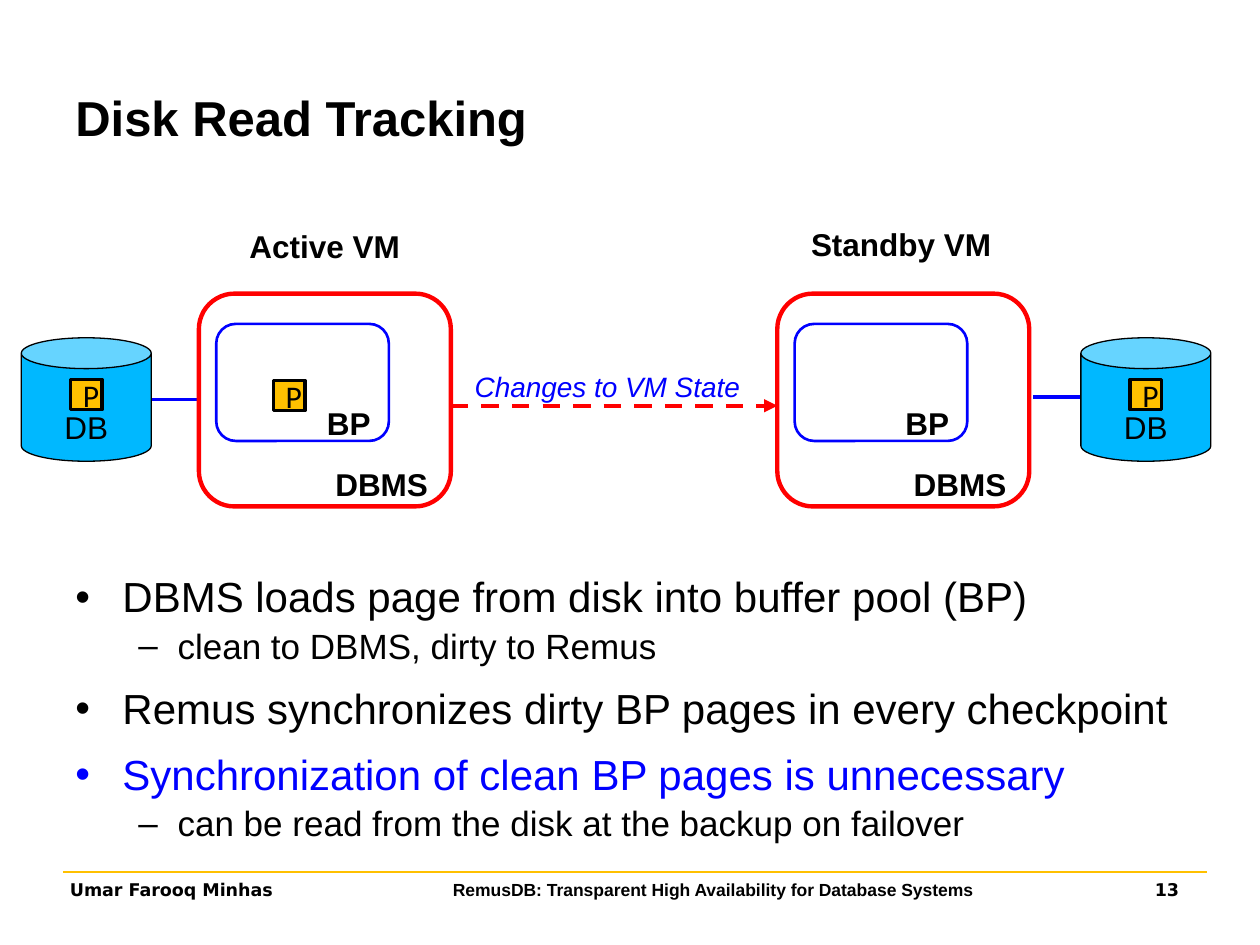
"""Build the Disk Read Tracking slide."""
from dataclasses import dataclass

from lxml.etree import SubElement
from pptx import Presentation
from pptx.dml.color import RGBColor
from pptx.enum.dml import MSO_LINE
from pptx.enum.shapes import MSO_CONNECTOR, MSO_SHAPE
from pptx.enum.text import MSO_ANCHOR, PP_ALIGN
from pptx.oxml.ns import qn
from pptx.util import Cm, Pt

COLORS = {
    "black": "000000",
    "blue": "0000FF",
    "red": "FF0000",
    "amber": "FFC000",
    "disk": "00B8FF",
}


@dataclass
class Machine:
    """A virtual machine with its disk, in centimetres."""
    title: str
    title_left: float
    title_top: float
    vm_left: float
    disk_left: float
    link_start: float
    link_y: float


@dataclass
class Bullet:
    """One point of the body text."""
    text: str
    level: int = 0
    before: float = 12
    color: str = "black"


@dataclass
class BulletStyle:
    """Marker, size and indents of one outline level."""
    marker: str
    size: float
    margin: float
    hanging: float


MACHINES = [
    Machine("Active VM", 4.78, 4.45, 4.01, 0.43, 3.05, 8.05),
    Machine("Standby VM", 16.1, 4.42, 15.67, 21.79, 20.83, 8.0),
]
BULLETS = [
    Bullet("DBMS loads page from disk into buffer pool (BP)", before=0),
    Bullet("clean to DBMS, dirty to Remus", 1, 4),
    Bullet("Remus synchronizes dirty BP pages in every checkpoint"),
    Bullet("Synchronization of clean BP pages is unnecessary", color="blue"),
    Bullet("can be read from the disk at the backup on failover", 1, 4),
]
STYLES = [BulletStyle("•", 24, 0.95, 0.95), BulletStyle("–", 20, 2.06, 0.79)]


def rgb(color: str) -> RGBColor:
    """Look up a named colour."""
    return RGBColor.from_string(COLORS[color])


def style_run(run, size: float, color: str = "black", bold: bool = False,
              italic: bool = False, face: str = "Arial") -> None:
    """Set the font of a run."""
    run.font.name = face
    run.font.size = Pt(size)
    run.font.bold = bold
    run.font.italic = italic
    run.font.color.rgb = rgb(color)


def add_text(slide, text: str, left: float, top: float, width: float, height: float,
             size: float, wrap: bool = True, **font):
    """Add a one-line text box and return its frame."""
    frame = slide.shapes.add_textbox(Cm(left), Cm(top), Cm(width), Cm(height)).text_frame
    frame.word_wrap = wrap
    frame.text = text
    style_run(frame.paragraphs[0].runs[0], size, **font)
    return frame


def add_box(slide, kind, left: float, top: float, width: float, height: float,
            line: str, weight: float, fill: str, text: str, align, anchor, **font):
    """Add a labelled preset shape and return its frame."""
    box = slide.shapes.add_shape(kind, Cm(left), Cm(top), Cm(width), Cm(height))
    box.shadow.inherit = False
    if fill:
        box.fill.solid()
        box.fill.fore_color.rgb = rgb(fill)
    else:
        box.fill.background()
    box.line.color.rgb = rgb(line)
    box.line.width = Pt(weight)
    frame = box.text_frame
    frame.text = text
    frame.vertical_anchor = anchor
    frame.paragraphs[0].alignment = align
    style_run(frame.paragraphs[0].runs[0], 18, **font)
    return frame


def add_line(slide, start: float, end: float, y: float, color: str, weight: float):
    """Add a horizontal line."""
    line = slide.shapes.add_connector(MSO_CONNECTOR.STRAIGHT, Cm(start), Cm(y), Cm(end), Cm(y))
    line.line.color.rgb = rgb(color)
    line.line.width = Pt(weight)
    SubElement(line._element.spPr, qn("a:effectLst"))
    return line


def add_page(slide, left: float, top: float) -> None:
    """Add a data page marked P."""
    add_box(slide, MSO_SHAPE.RECTANGLE, left, top, 0.64, 0.61, "black", 2, "amber",
            "P", PP_ALIGN.CENTER, MSO_ANCHOR.MIDDLE, face="Calibri")


def add_container(slide, text: str, left: float, top: float, width: float, height: float,
                  line: str, weight: float, label_drop: float) -> None:
    """Add a rounded outline with its label at the lower right."""
    frame = add_box(slide, MSO_SHAPE.ROUNDED_RECTANGLE, left, top, width, height, line, weight,
                    "", text, PP_ALIGN.RIGHT, MSO_ANCHOR.TOP, bold=True)
    frame.margin_top = Cm(label_drop)
    frame.margin_bottom = 0


def add_machine(slide, machine: Machine) -> None:
    """Add a virtual machine, its buffer pool and its disk."""
    add_text(slide, machine.title, machine.title_left, machine.title_top, 4.2, 1.02, 18,
             wrap=False, bold=True)
    add_line(slide, machine.link_start, machine.link_start + 0.96, machine.link_y, "blue", 2)
    add_container(slide, "BP", machine.vm_left + 0.35, 6.53, 3.48, 2.36, "blue", 1.5, 1.5)
    add_container(slide, "DBMS", machine.vm_left, 5.92, 5.08, 4.29, "red", 2.5, 3.24)
    disk = add_box(slide, MSO_SHAPE.CAN, machine.disk_left, 6.81, 2.62, 2.49, "black", 0.75,
                   "disk", "DB", PP_ALIGN.CENTER, MSO_ANCHOR.BOTTOM)
    disk.margin_bottom = 0
    add_page(slide, machine.disk_left + 0.99, 7.65)


def add_bullets(slide) -> None:
    """Add the two-level body text."""
    frame = slide.shapes.add_textbox(Cm(1.27), Cm(11.5), Cm(23.7), Cm(5.9)).text_frame
    frame.word_wrap = True
    for index, bullet in enumerate(BULLETS):
        style = STYLES[bullet.level]
        paragraph = frame.paragraphs[0] if index == 0 else frame.add_paragraph()
        paragraph.text = bullet.text
        paragraph.level = bullet.level
        paragraph.line_spacing = 0.9
        paragraph.space_before = Pt(bullet.before)
        properties = paragraph._p.get_or_add_pPr()
        properties.set("marL", str(Cm(style.margin)))
        properties.set("indent", str(-Cm(style.hanging)))
        SubElement(properties, qn("a:buFont"), typeface="Arial")
        SubElement(properties, qn("a:buChar"), char=style.marker)
        style_run(paragraph.runs[0], style.size, bullet.color)


def add_footer(slide) -> None:
    """Add the footer rule with author, talk title and page number."""
    add_line(slide, 1.27, 24.33, 17.58, "amber", 0.75)
    frame = add_text(slide, "Umar Farooq Minhas", 1.16, 17.6, 23.1, 1.02, 10,
                     bold=True, face="DejaVu Sans")
    paragraph = frame.paragraphs[0]
    stops = SubElement(paragraph._p.get_or_add_pPr(), qn("a:tabLst"))
    for position, align in ((12.96, "ctr"), (22.36, "r")):
        SubElement(stops, qn("a:tab"), pos=str(Cm(position)), algn=align)
    for text, face in (
        ("\tRemusDB: Transparent High Availability for Database Systems", "Arial"),
        ("\t13", "DejaVu Sans"),
    ):
        run = paragraph.add_run()
        run.text = text
        style_run(run, 10, bold=True, face=face)


def main() -> None:
    """Draw the slide and save it."""
    deck = Presentation()
    deck.slide_width, deck.slide_height = Cm(25.4), Cm(19.05)
    slide = deck.slides.add_slide(deck.slide_layouts[6])
    add_footer(slide)
    title = add_text(slide, "Disk Read Tracking", 1.27, 0.76, 22.86, 3.18, 28, bold=True)
    title.vertical_anchor = MSO_ANCHOR.MIDDLE
    for machine in MACHINES:
        add_machine(slide, machine)
    add_page(slide, 5.51, 7.67)
    add_text(slide, "Changes to VM State", 9.32, 7.32, 6.35, 0.94, 16, color="blue", italic=True)
    changes = add_line(slide, 9.09, 15.67, 8.18, "red", 2.5)
    changes.line.dash_style = MSO_LINE.DASH
    SubElement(changes.line._get_or_add_ln(), qn("a:tailEnd"), type="triangle")
    add_bullets(slide)
    deck.save("out.pptx")


if __name__ == "__main__":
    main()
